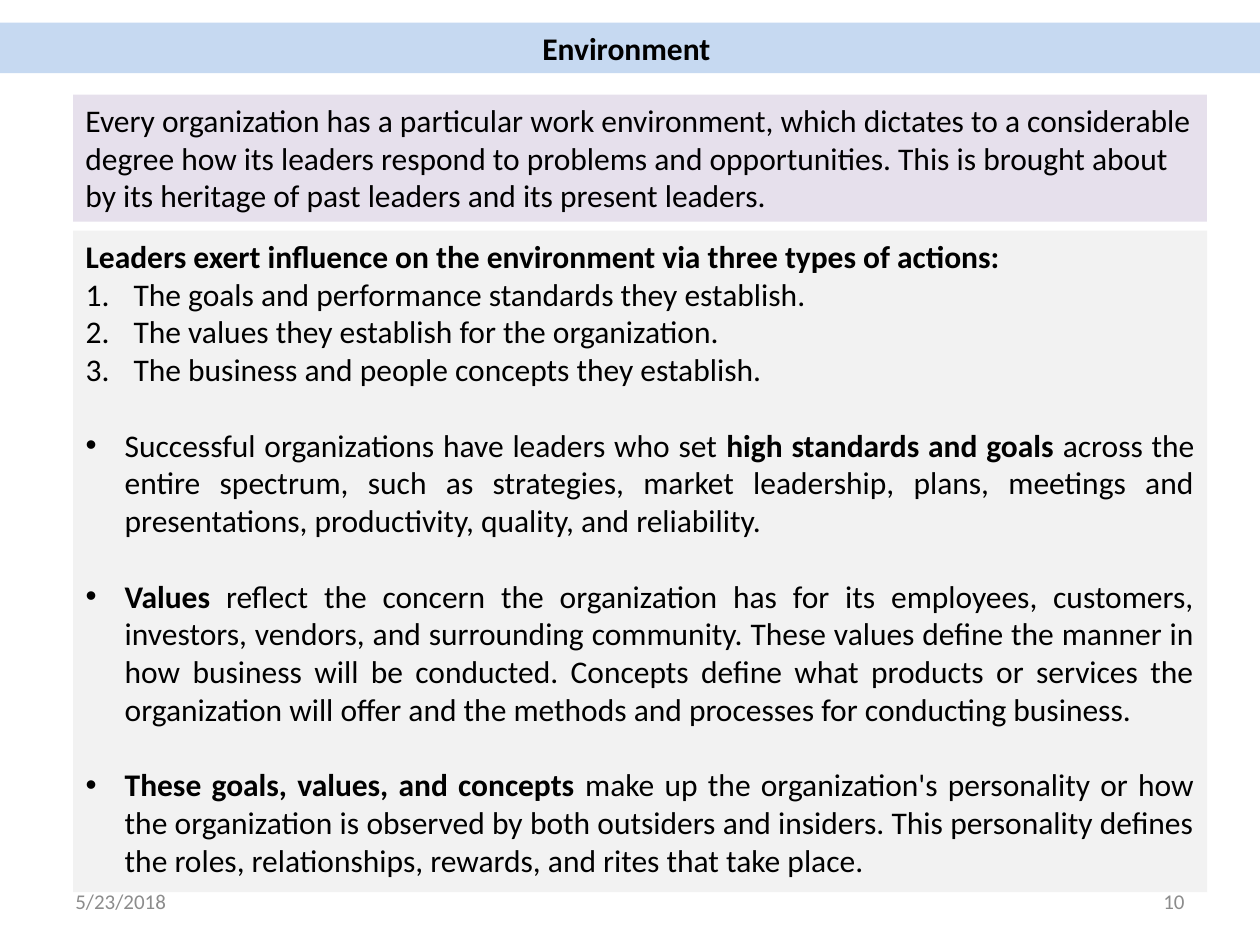
from dataclasses import dataclass

from lxml import etree
from pptx import Presentation, util as u
from pptx.dml.color import RGBColor
from pptx.enum import text
from pptx.oxml.ns import qn


@dataclass(frozen=True)
class Theme:
    """Colours, font and type sizes of the slide."""
    font: str = "Calibri"
    size: float = 18
    small: float = 12
    gap: float = 21.5
    ink: str = "000000"
    muted: str = "8C8C8C"
    banner: str = "C6D9F1"
    intro: str = "E6E0EC"
    panel: str = "F2F2F2"


T = Theme()
AL = text.PP_ALIGN
INTRO = ("Every organization has a particular work environment, which dictates to a considerable "
         "degree how its leaders respond to problems and opportunities. This is brought about by "
         "its heritage of past leaders and its present leaders.")
HEADING = "Leaders exert influence on the environment via three types of actions: "
ACTIONS = ["The goals and performance standards they establish. ",
           "The values they establish for the organization. ",
           "The business and people concepts they establish. "]
POINTS = [
    [("Successful organizations have leaders who set ", False),
     ("high standards and goals ", True),
     ("across the entire spectrum, such as strategies, market leadership, plans, meetings and "
      "presentations, productivity, quality, and reliability. ", False)],
    [("Values", True),
     (" reflect the concern the organization has for its employees, customers, investors, "
      "vendors, and surrounding community. These values define the manner in how business will "
      "be conducted. Concepts define what products or services the organization will offer and "
      "the methods and processes for conducting business. ", False)],
    [("These goals, values, and concepts ", True),
     ("make up the organization's personality or how the organization is observed by both "
      "outsiders and insiders. This personality defines the roles, relationships, rewards, and "
      "rites that take place. ", False)],
]


def place(sp, box, fill=None, anchor=text.MSO_ANCHOR.TOP):
    """Move a shape to a box in inches, fill it and return its text frame."""
    sp.left, sp.top, sp.width, sp.height = map(u.Inches, box)
    if fill:
        sp.fill.solid()
        sp.fill.fore_color.rgb = RGBColor.from_string(fill)
    tf = sp.text_frame
    tf.word_wrap = True
    tf.auto_size = text.MSO_AUTO_SIZE.NONE
    tf.vertical_anchor = anchor
    return tf


def write(p, parts, align=AL.LEFT, size=T.size, color=T.ink, before=0):
    """Fill a paragraph with (text, bold) runs."""
    p.alignment = align
    p.space_before = u.Pt(before)
    for words, bold in parts:
        r = p.add_run()
        r.text = words
        r.font.name, r.font.size, r.font.bold = T.font, u.Pt(size), bold
        r.font.color.rgb = RGBColor.from_string(color)


def mark(p, tag, indent=0, **attrs):
    """Give a paragraph a list marker and a hanging indent in inches."""
    pPr = p._p.get_or_add_pPr()
    pPr.set("marL", str(u.Inches(indent)))
    pPr.set("indent", str(-u.Inches(indent)))
    if tag != "buNone":
        etree.SubElement(pPr, qn("a:buFont"), typeface="Arial" if tag == "buChar" else "+mj-lt")
    etree.SubElement(pPr, qn(f"a:{tag}"), **attrs)


def banner(s, box):
    """Place the title across the top band."""
    tf = place(s.shapes.title, box, T.banner)
    write(tf.paragraphs[0], [("Environment ", True)], AL.CENTER)


def intro(s, box):
    """Place the opening statement."""
    tf = place(s.shapes.add_textbox(0, 0, 0, 0), box, T.intro)
    write(tf.paragraphs[0], [(INTRO, False)])


def panel(s, box):
    """Place the heading, numbered actions and bulleted points."""
    tf = place(s.placeholders[1], box, T.panel)
    p = tf.paragraphs[0]
    write(p, [(HEADING, True)], AL.JUSTIFY)
    mark(p, "buNone")
    for action in ACTIONS:
        p = tf.add_paragraph()
        write(p, [(action, False)], AL.JUSTIFY)
        mark(p, "buAutoNum", 0.38, type="arabicPeriod")
    for parts in POINTS:
        p = tf.add_paragraph()
        write(p, parts, AL.JUSTIFY, before=T.gap)
        mark(p, "buChar", 0.31, char="•")


def footer(s, box):
    """Place the date and page number at the ends of the bottom row."""
    x, y, w, h = box
    cell = 2.33
    for words, left, align in (("5/23/2018", x, AL.LEFT), ("10", x + w - cell, AL.RIGHT)):
        tf = place(s.shapes.add_textbox(0, 0, 0, 0), (left, y, cell, h),
                   anchor=text.MSO_ANCHOR.MIDDLE)
        write(tf.paragraphs[0], [(words, False)], align, T.small, T.muted)


def main():
    """Build and save the slide."""
    prs = Presentation()
    prs.slide_width, prs.slide_height = u.Inches(10), u.Inches(7.5)
    s = prs.slides.add_slide(prs.slide_layouts[1])
    left, width = 0.58, 9
    banner(s, (0, 0.18, 10, 0.4))
    intro(s, (left, 0.75, width, 1.01))
    panel(s, (left, 1.83, width, 5.25))
    footer(s, (0.5, 6.95, width, 0.4))
    prs.save("out.pptx")


if __name__ == "__main__":
    main()
